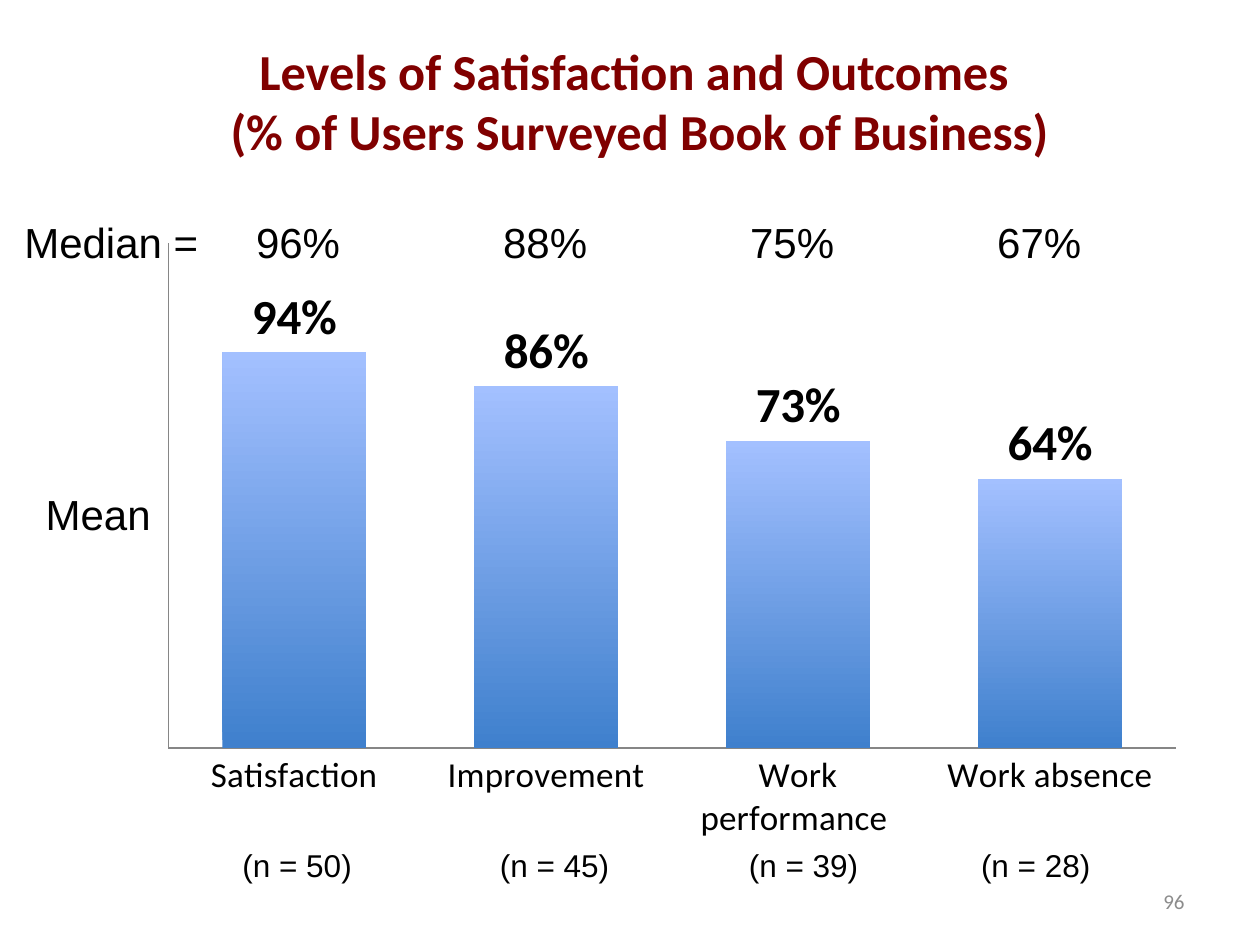
from lxml import etree
from pptx import Presentation
from pptx import util as u
from pptx.chart.data import CategoryChartData
from pptx.dml.color import RGBColor
from pptx.enum import chart as charts, text
from pptx.oxml import ns

MAROON = RGBColor(0x80, 0x00, 0x00)
BLACK = RGBColor(0x00, 0x00, 0x00)
GRAY = RGBColor(0x8C, 0x8C, 0x8C)
AXIS_GRAY = RGBColor(0x86, 0x86, 0x86)
BAR_BOTTOM = RGBColor(0x3F, 0x80, 0xCD)
BAR_TOP = RGBColor(0xA3, 0xC0, 0xFF)

TITLE = ["Levels of Satisfaction and Outcomes ", "(% of Users Surveyed Book of Business)"]
CATEGORIES = ["Satisfaction", "Improvement", "Work performance ", "Work absence"]
MEANS = [0.94, 0.86, 0.73, 0.64]
MEDIANS = ["96%", "88%", "75%", "67%"]
COUNTS = ["(n = 50)", "(n = 45)", "(n = 39)", "(n = 28)"]
MEDIAN_CENTERS = [6.01 + 4.98 * column for column in range(len(MEDIANS))]
COUNT_CENTERS = [5.99, 11.18, 16.2, 20.88]
PAGE_NUMBER = "96"
INSET = 0.25
LABEL_INSET = 0.49


def add_text(slide, box, lines, size, font="Arial", color=BLACK, bold=False,
             align=text.PP_ALIGN.LEFT, anchor=text.MSO_ANCHOR.TOP, inset=INSET, wrap=True):
    shape = slide.shapes.add_textbox(*map(u.Cm, box))
    frame = shape.text_frame
    frame.word_wrap = wrap
    frame.vertical_anchor = anchor
    frame.margin_left = u.Cm(inset)
    paragraph = frame.paragraphs[0]
    paragraph.alignment = align
    for index, line in enumerate(lines):
        if index:
            paragraph.add_line_break()
        run = paragraph.add_run()
        run.text = line
        run.font.name = font
        run.font.size = u.Pt(size)
        run.font.bold = bold
        run.font.color.rgb = color
    return paragraph


def add_row(slide, box, label, values, centers, size, inset=INSET):
    paragraph = add_text(slide, box, ["\t".join([label, *values])], size, inset=inset)
    tabs = etree.SubElement(paragraph._p.get_or_add_pPr(), ns.qn("a:tabLst"))
    for center in centers:
        position = u.Cm(center - box[0] - inset)
        etree.SubElement(tabs, ns.qn("a:tab"), pos=str(int(position)), algn="ctr")


def set_plot_layout(chart, **fractions):
    plot_area = chart._chartSpace.chart.plotArea
    for old in plot_area.findall(ns.qn("c:layout")):
        plot_area.remove(old)
    layout = etree.Element(ns.qn("c:layout"))
    manual = etree.SubElement(layout, ns.qn("c:manualLayout"))
    settings = {"layoutTarget": "inner", "xMode": "edge", "yMode": "edge", **fractions}
    for name, value in settings.items():
        etree.SubElement(manual, ns.qn(f"c:{name}"), val=str(value))
    plot_area.insert(0, layout)


def add_mean_chart(slide, box):
    data = CategoryChartData(number_format="0%")
    data.categories = CATEGORIES
    data.add_series("Series 1", MEANS)
    chart = slide.shapes.add_chart(
        charts.XL_CHART_TYPE.COLUMN_CLUSTERED, *map(u.Cm, box), data).chart
    chart.has_legend = False
    chart.has_title = False
    chart.font.name = "Calibri"
    chart.font.size = u.Pt(18)
    chart.font.color.rgb = BLACK
    set_plot_layout(chart, x=0.02, y=0.02, w=0.96, h=0.81)

    for axis in (chart.category_axis, chart.value_axis):
        axis.major_tick_mark = axis.minor_tick_mark = charts.XL_TICK_MARK.NONE
        axis.has_major_gridlines = False
        axis.format.line.color.rgb = AXIS_GRAY
        axis.format.line.width = u.Pt(0.75)
    chart.category_axis.tick_labels.font.size = u.Pt(20)
    value_axis = chart.value_axis
    value_axis.minimum_scale = 0
    value_axis.maximum_scale = value_axis.major_unit = 1.2
    value_axis.tick_label_position = charts.XL_TICK_LABEL_POSITION.NONE

    plot = chart.plots[0]
    plot.gap_width = 75
    plot.vary_by_categories = False
    fill = plot.series[0].format.fill
    fill.gradient()
    fill.gradient_angle = 90
    for stop, color in zip(fill.gradient_stops, (BAR_BOTTOM, BAR_TOP)):
        stop.color.rgb = color

    plot.has_data_labels = True
    labels = plot.data_labels
    labels.show_value = True
    labels.number_format = "0%"
    labels.number_format_is_linked = False
    labels.position = charts.XL_LABEL_POSITION.OUTSIDE_END
    labels.font.name = "Calibri"
    labels.font.size = u.Pt(28)
    labels.font.bold = True
    labels.font.color.rgb = BLACK


def main():
    presentation = Presentation()
    presentation.slide_width = u.Cm(25.4)
    presentation.slide_height = u.Cm(19.05)
    slide = presentation.slides.add_slide(presentation.slide_layouts[6])
    add_text(slide, (1.47, 0.43, 22.86, 3.18), TITLE, 28.8, "Calibri", MAROON, True,
             text.PP_ALIGN.CENTER, text.MSO_ANCHOR.MIDDLE)
    add_text(slide, (18.21, 17.65, 5.92, 1.02), [PAGE_NUMBER], 12, "Calibri", GRAY,
             align=text.PP_ALIGN.RIGHT, anchor=text.MSO_ANCHOR.MIDDLE)
    add_mean_chart(slide, (2.97, 4.65, 21.16, 12.57))
    add_row(slide, (3.61, 16.94, 19.69, 1.02), "", COUNTS, COUNT_CENTERS, 18)
    add_row(slide, (0, 4.24, 23.06, 1.27), "Median =", MEDIANS, MEDIAN_CENTERS, 24, LABEL_INSET)
    add_text(slide, (0.43, 9.73, 2.9, 1.27), ["Mean"], 24, inset=LABEL_INSET, wrap=False)
    presentation.save("out.pptx")


if __name__ == "__main__":
    main()
